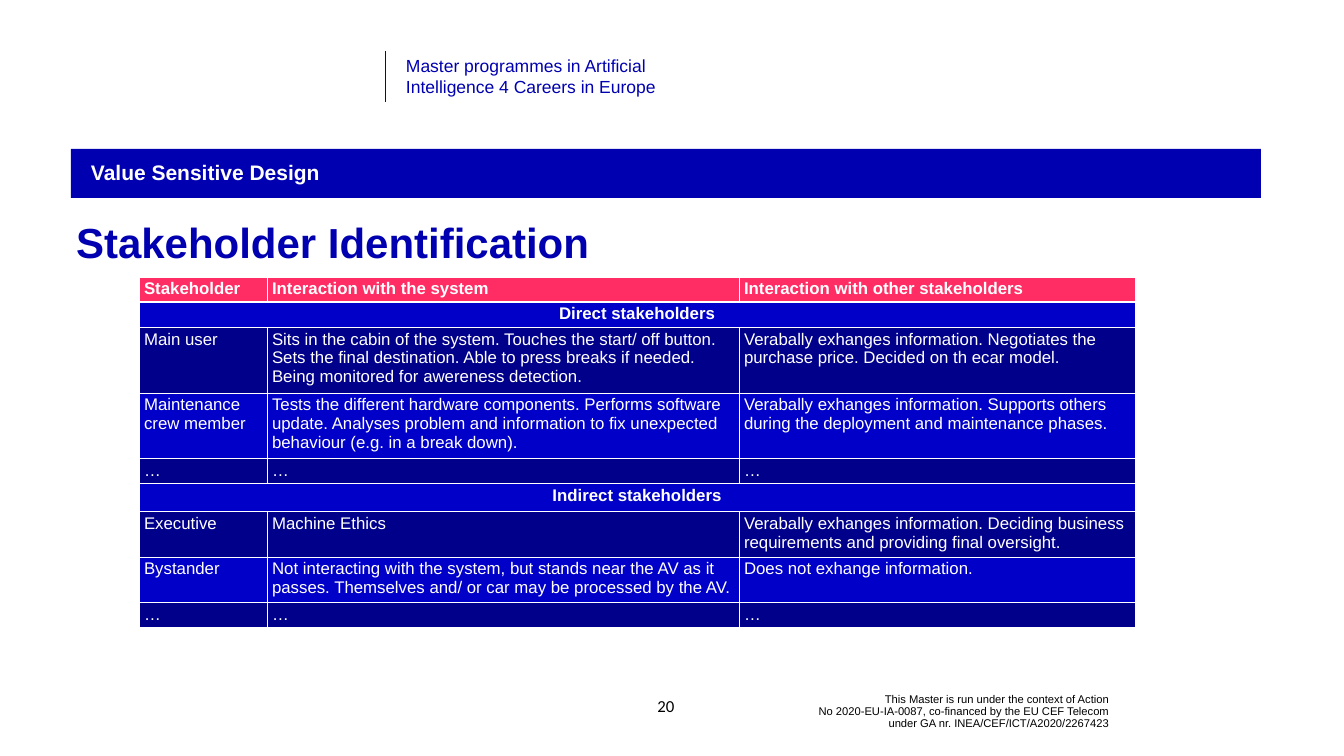
from dataclasses import dataclass

from lxml import etree
from pptx import Presentation
from pptx import util as u
from pptx.dml.color import RGBColor
from pptx.enum import shapes, text
from pptx.oxml.ns import qn

PX = 914400 / 50.4


@dataclass(frozen=True)
class Theme:
    blue: str = "0000B0"
    dark_row: str = "00008A"
    light_row: str = "0100C8"
    header: str = "FF2D64"
    white: str = "FFFFFF"
    black: str = "000000"
    font: str = "Arial"
    number_font: str = "Calibri"
    title_size: int = 60
    section_size: int = 30
    programme_size: int = 25
    table_size: int = 24
    credit_size: int = 16


T = Theme()

TITLE = "Stakeholder Identification"
SECTION = "Value Sensitive Design"
PROGRAMME = "Master programmes in Artificial\vIntelligence 4 Careers in Europe"
PAGE = "20"
CREDIT = ("This Master is run under the context of Action\v"
          "No 2020-EU-IA-0087, co-financed by the EU CEF Telecom\v"
          "under GA nr. INEA/CEF/ICT/A2020/2267423")

# One-item rows are group headings that span the table.
ROWS = [
    ("Stakeholder", "Interaction with the system", "Interaction with other stakeholders"),
    ("Direct stakeholders",),
    ("Main user",
     "Sits in the cabin of the system. Touches the start/ off button. Sets the final "
     "destination. Able to press breaks if needed. Being monitored for awereness detection.",
     "Verabally exhanges information. Negotiates the purchase price. Decided on th ecar model."),
    ("Maintenance crew member",
     "Tests the different hardware components. Performs software update. Analyses problem "
     "and information to fix unexpected behaviour (e.g. in a break down).",
     "Verabally exhanges information. Supports others during the deployment and "
     "maintenance phases."),
    ("…", "…", "…"),
    ("Indirect stakeholders",),
    ("Executive", "Machine Ethics",
     "Verabally exhanges information. Deciding business requirements and providing "
     "final oversight."),
    ("Bystander",
     "Not interacting with the system, but stands near the AV as it passes. Themselves "
     "and/ or car may be processed by the AV.",
     "Does not exhange information."),
    ("…", "…", "…"),
]
COL_WIDTHS = (128, 472, 396)
ROW_HEIGHTS = (23, 24, 62, 61, 24, 28, 43, 42, 24)


def px(*values):
    return [u.Emu(round(v * PX)) for v in values]


def rgb(color):
    return RGBColor.from_string(color)


def write(tf, content, size, color, font=T.font, bold=False, align=text.PP_ALIGN.LEFT,
          anchor=text.MSO_ANCHOR.TOP, spacing=None):
    tf.word_wrap = True
    tf.vertical_anchor = anchor
    p = tf.paragraphs[0]
    p.text = content
    p.alignment = align
    if spacing:
        p.line_spacing = spacing
    for r in p.runs:
        r.font.size = u.Pt(size)
        r.font.name = font
        r.font.bold = bold
        r.font.color.rgb = rgb(color)


def add_text(s, box, content, size, color, **fmt):
    write(s.shapes.add_textbox(*px(*box)).text_frame, content, size, color, **fmt)


def set_borders(cell, bottom=1):
    """Draw white borders; they must precede the cell fill in the XML."""
    tc_pr = cell._tc.get_or_add_tcPr()
    for side, width in (("L", 1), ("R", 1), ("T", 1), ("B", bottom)):
        ln = etree.SubElement(tc_pr, qn(f"a:ln{side}"), w=str(u.Pt(width)))
        fill = etree.SubElement(ln, qn("a:solidFill"))
        etree.SubElement(fill, qn("a:srgbClr"), val=T.white)


def add_stakeholder_table(s, left, top):
    frame = s.shapes.add_table(len(ROWS), len(COL_WIDTHS),
                               *px(left, top, sum(COL_WIDTHS), sum(ROW_HEIGHTS)))
    table = frame.table
    for col, width in zip(table.columns, px(*COL_WIDTHS)):
        col.width = width
    for i, (row, height) in enumerate(zip(ROWS, px(*ROW_HEIGHTS))):
        table.rows[i].height = height
        is_group = len(row) == 1
        color = T.header if i == 0 else (T.light_row if i % 2 else T.dark_row)
        for cell in table.rows[i].cells:
            set_borders(cell, bottom=3 if i == 0 else 1)
            cell.fill.solid()
            cell.fill.fore_color.rgb = rgb(color)
        if is_group:
            table.cell(i, 0).merge(table.cell(i, len(COL_WIDTHS) - 1))
        for j, content in enumerate(row):
            write(table.cell(i, j).text_frame, content, T.table_size, T.white,
                  bold=i == 0 or is_group,
                  align=text.PP_ALIGN.CENTER if is_group else text.PP_ALIGN.LEFT)


def add_section_bar(s, box):
    bar = s.shapes.add_shape(shapes.MSO_SHAPE.RECTANGLE, *px(*box))
    bar.shadow.inherit = False
    bar.fill.solid()
    bar.fill.fore_color.rgb = rgb(T.blue)
    bar.line.fill.background()
    bar.text_frame.margin_left = px(20)[0]
    write(bar.text_frame, SECTION, T.section_size, T.white, bold=True,
          anchor=text.MSO_ANCHOR.MIDDLE, spacing=0.9)


def add_divider(s, x, top, bottom):
    line = s.shapes.add_connector(shapes.MSO_CONNECTOR.STRAIGHT, *px(x, top, x, bottom))
    line.line.color.rgb = rgb(T.blue)
    line.line.width = u.Pt(0.5)
    etree.SubElement(line._element.spPr, qn("a:effectLst"))


def main():
    prs = Presentation()
    prs.slide_width, prs.slide_height = px(1344, 756)
    s = prs.slides.add_slide(prs.slide_layouts[5])

    add_text(s, (757, 692, 357, 39), CREDIT, T.credit_size, T.black, spacing=0.9,
             align=text.PP_ALIGN.RIGHT, anchor=text.MSO_ANCHOR.MIDDLE)
    add_divider(s, 385, 51, 102)
    add_text(s, (401, 53, 321, 47), PROGRAMME, T.programme_size, T.blue)
    add_section_bar(s, (71, 149, 1190, 49))

    title = s.shapes.title
    title.left, title.top, title.width, title.height = px(71, 215, 1190, 62)
    write(title.text_frame, TITLE, T.title_size, T.blue, bold=True, spacing=u.Pt(70))
    title.text_frame.auto_size = text.MSO_AUTO_SIZE.NONE

    add_text(s, (638, 686, 56, 40), PAGE, T.table_size, T.black, font=T.number_font,
             align=text.PP_ALIGN.CENTER, anchor=text.MSO_ANCHOR.MIDDLE)
    add_stakeholder_table(s, 139, 277)
    prs.save("out.pptx")


if __name__ == "__main__":
    main()
